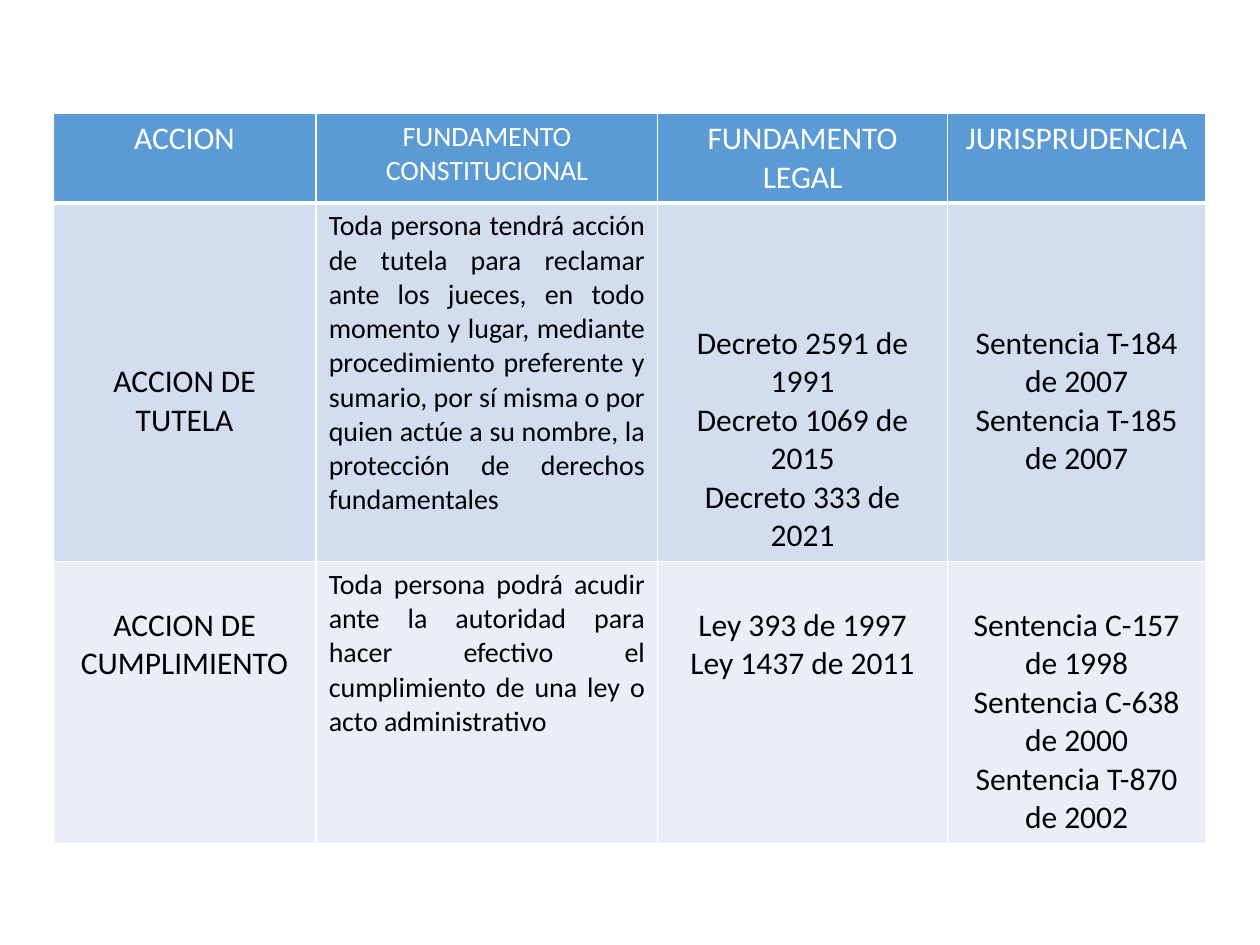
from lxml import etree
from pptx import Presentation
from pptx import util as u
from pptx.dml.color import RGBColor
from pptx.enum import text
from pptx.oxml.ns import qn

COLORS = {"header": "5B9BD5", "odd": "D2DEEF", "even": "EAEFF7",
          "white": "FFFFFF", "black": "000000"}
CENTER, JUSTIFY = text.PP_ALIGN.CENTER, text.PP_ALIGN.JUSTIFY
FONT = "Calibri"
LINE = 0.305  # height of one 18 pt line
MARGIN = 0.05

COLUMNS = [2.09, 2.71, 2.3, 2.05]
HEADERS = ["ACCION", "FUNDAMENTO CONSTITUCIONAL", "FUNDAMENTO LEGAL", "JURISPRUDENCIA"]
# Each body cell: paragraphs, and how many lines the text is lowered by
ACTIONS = [
    [(["ACCION DE TUTELA"], 4),
     (["Toda persona tendrá acción de tutela para reclamar ante los jueces, en todo "
       "momento y lugar, mediante procedimiento preferente y sumario, por sí misma o por "
       "quien actúe a su nombre, la protección de derechos fundamentales"], 0),
     (["Decreto 2591 de 1991", "Decreto 1069 de 2015", "Decreto 333 de 2021"], 3),
     (["Sentencia T-184 de 2007", "Sentencia T-185 de 2007"], 3)],
    [(["ACCION DE CUMPLIMIENTO"], 1),
     (["Toda persona podrá acudir ante la autoridad para hacer efectivo el cumplimiento "
       "de una ley o acto administrativo"], 0),
     (["Ley 393 de 1997", "Ley 1437 de 2011"], 1),
     (["Sentencia C-157 de 1998", "Sentencia C-638 de 2000",
       "Sentencia T-870 de 2002"], 1)],
]
ROW_LINES = [2, 9, 7]


def write_cell(cell, paragraphs, *, fill, color, size, align, lowered=0):
    cell.fill.solid()
    cell.fill.fore_color.rgb = RGBColor.from_string(COLORS[fill])
    cell.margin_top = u.Inches(MARGIN + lowered * LINE)
    frame = cell.text_frame
    for index, content in enumerate(paragraphs):
        paragraph = frame.add_paragraph() if index else frame.paragraphs[0]
        paragraph.alignment = align
        run = paragraph.add_run()
        run.text = content
        run.font.name, run.font.size, run.font.bold = FONT, u.Pt(size), False
        run.font.color.rgb = RGBColor.from_string(COLORS[color])


def add_borders(cell, bottom=1):
    properties = cell._tc.get_or_add_tcPr()
    widths = {"a:lnL": 1, "a:lnR": 1, "a:lnT": 1, "a:lnB": bottom}
    for position, (tag, width) in enumerate(widths.items()):
        line = etree.Element(qn(tag), w=str(u.Pt(width)))
        solid = etree.SubElement(line, qn("a:solidFill"))
        etree.SubElement(solid, qn("a:srgbClr"), val=COLORS["white"])
        properties.insert(position, line)


def main():
    presentation = Presentation()
    presentation.slide_width, presentation.slide_height = u.Inches(10), u.Inches(7.5)
    slide = presentation.slides.add_slide(presentation.slide_layouts[6])

    heights = [2 * MARGIN + lines * LINE for lines in ROW_LINES]
    table = slide.shapes.add_table(
        len(heights), len(COLUMNS), u.Inches(0.42), u.Inches(0.9),
        u.Inches(sum(COLUMNS)), u.Inches(sum(heights))).table
    table.horz_banding = False
    for column, width in zip(table.columns, COLUMNS):
        column.width = u.Inches(width)
    for row, height in zip(table.rows, heights):
        row.height = u.Inches(height)

    for column, header in enumerate(HEADERS):
        cell = table.cell(0, column)
        write_cell(cell, [header], fill="header", color="white",
                   size=16 if column == 1 else 18, align=CENTER)
        add_borders(cell, bottom=3)
    for row, (action, fill) in enumerate(zip(ACTIONS, ("odd", "even")), start=1):
        for column, (paragraphs, lowered) in enumerate(action):
            cell = table.cell(row, column)
            write_cell(cell, paragraphs, fill=fill, color="black", lowered=lowered,
                       size=16 if column == 1 else 18,
                       align=JUSTIFY if column == 1 else CENTER)
            add_borders(cell)

    presentation.save("out.pptx")


if __name__ == "__main__":
    main()
